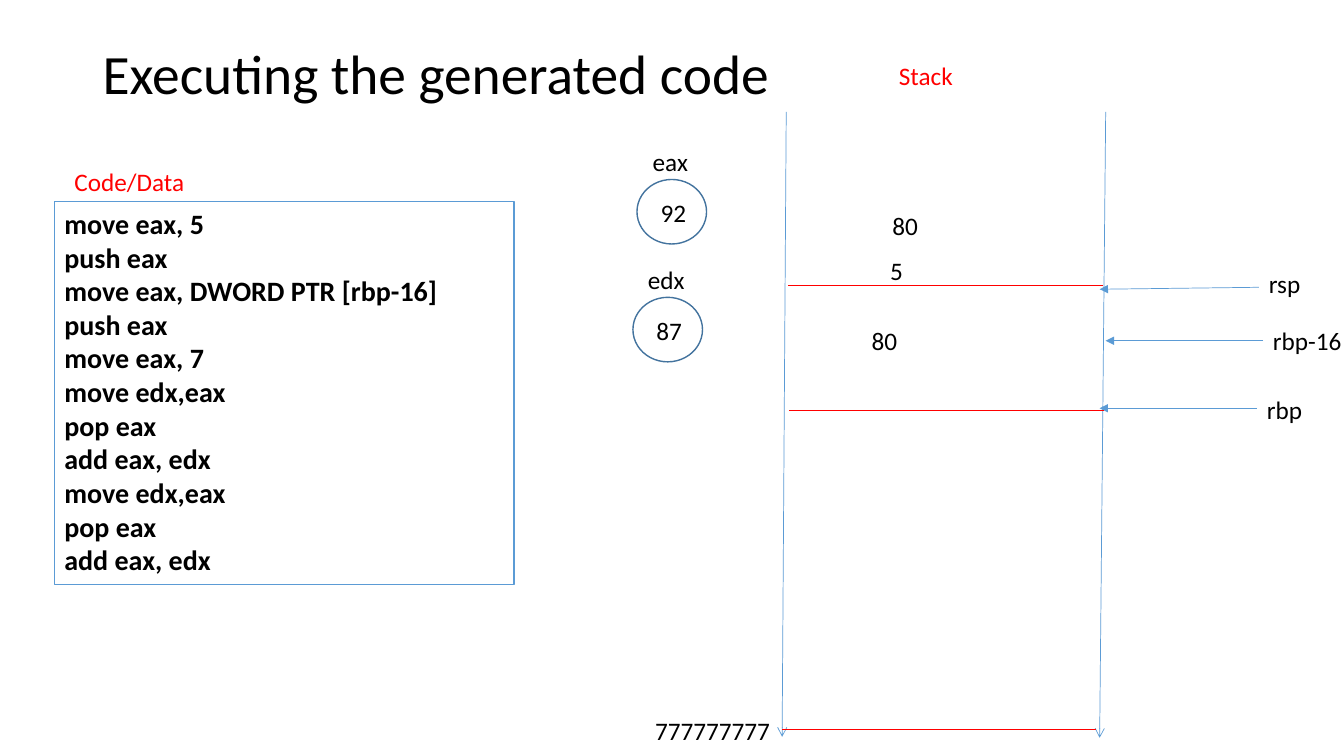
import pptx
import pptx.util
import pptx.dml.color
import pptx.enum.dml
import pptx.enum.shapes
import pptx.enum.text
import pptx.oxml

Pt = pptx.util.Pt
Align = pptx.enum.text.PP_ALIGN
Shape = pptx.enum.shapes.MSO_SHAPE
BLACK, RED, BLUE, DARK_BLUE = "000000", "FF0000", "5B9BD5", "43739E"


def paint(color, value):
    color.rgb = pptx.dml.color.RGBColor.from_string(value)


def write(box, text, size=18, color=BLACK, bold=False, align=Align.LEFT,
          anchor=pptx.enum.text.MSO_ANCHOR.TOP, spacing=1.0):
    frame = box.text_frame
    frame.word_wrap = True
    frame.vertical_anchor = anchor
    for number, words in enumerate(text.split("\n")):
        para = frame.add_paragraph() if number else frame.paragraphs[0]
        para.alignment = align
        para.line_spacing = spacing
        span = para.add_run()
        span.text = words
        span.font.name = "Calibri"
        span.font.size = Pt(size)
        span.font.bold = bold
        paint(span.font.color, color)


deck = pptx.Presentation()
deck.slide_width, deck.slide_height = Pt(960), Pt(540)
page = deck.slides.add_slide(deck.slide_layouts[6])
shapes = page.shapes

title = shapes.add_textbox(Pt(66.24), Pt(28.8), Pt(828), Pt(51.12))
write(title, "Executing the generated code", size=39.6, spacing=0.9,
      anchor=pptx.enum.text.MSO_ANCHOR.MIDDLE)

code = """move eax, 5
push eax
move eax, DWORD PTR [rbp-16]
push eax
move eax, 7
move edx,eax
pop eax
add eax, edx
move edx,eax
pop eax
add eax, edx"""
listing = shapes.add_shape(Shape.RECTANGLE, Pt(38.9), Pt(144), Pt(328.3), Pt(273.6))
listing.shadow.inherit = False
listing.fill.background()
paint(listing.line.color, BLUE)
listing.line.width = Pt(0.75)
write(listing, code, size=20, bold=True)

labels = [
    ("Code/Data", 46.1, 115.2, 170.6, RED, Align.LEFT),
    ("Stack", 635, 39.6, 170.6, RED, Align.LEFT),
    ("rsp", 899.3, 187.9, 50.4, BLACK, Align.LEFT),
    ("rbp-16", 902.2, 229, 69.8, BLACK, Align.LEFT),
    ("rbp", 897.8, 277.9, 50.4, BLACK, Align.LEFT),
    ("777777777", 460.8, 507.6, 114.5, BLACK, Align.LEFT),
    ("80", 615.6, 229, 74.9, BLACK, Align.LEFT),
    ("80", 626.4, 146.9, 40.3, BLACK, Align.CENTER),
    ("5", 626.4, 178.6, 28.1, BLACK, Align.CENTER),
]
for text, left, top, width, color, align in labels:
    label = shapes.add_textbox(Pt(left), Pt(top), Pt(width), Pt(28.8))
    write(label, text, color=color, align=align)

registers = [("eax", "92", 455, 128.2), ("edx", "87", 452.1, 212.4)]
for name, value, left, top in registers:
    circle = shapes.add_shape(Shape.OVAL, Pt(left), Pt(top), Pt(49.7), Pt(46.1))
    circle.shadow.inherit = False
    circle.fill.background()
    paint(circle.line.color, DARK_BLUE)
    circle.line.width = Pt(1)
    name_box = shapes.add_textbox(Pt(left - 4.6), Pt(top - 27.4), Pt(56.9), Pt(28.8))
    write(name_box, name, align=Align.CENTER)
    value_box = shapes.add_textbox(Pt(left + 5.8), Pt(top + 9.4), Pt(40.3), Pt(28.8))
    write(value_box, value, align=Align.CENTER)

lines = [
    (561.6, 79.9, 558.7, 526.3, BLUE, "arrow"),
    (789.8, 79.9, 785.5, 527, BLUE, "arrow"),
    (899.3, 205.2, 785.5, 206.6, BLUE, "triangle"),
    (902.2, 243.4, 789.8, 243.4, BLUE, "triangle"),
    (897.8, 291.6, 785.5, 291.6, BLUE, "triangle"),
    (563, 203.8, 787.7, 203.8, RED, None),
    (563.8, 293, 788.4, 293, RED, None),
    (558.7, 521.3, 782.6, 521.3, RED, None),
]
namespace = 'xmlns:a="http://schemas.openxmlformats.org/drawingml/2006/main"'
for start_x, start_y, end_x, end_y, color, head in lines:
    line = shapes.add_connector(pptx.enum.shapes.MSO_CONNECTOR.STRAIGHT,
                                Pt(start_x), Pt(start_y), Pt(end_x), Pt(end_y))
    paint(line.line.color, color)
    line.line.width = Pt(0.5)
    if head:
        line.line._get_or_add_ln().append(
            pptx.oxml.parse_xml(f'<a:tailEnd {namespace} type="{head}"/>'))
    line._element.spPr.append(pptx.oxml.parse_xml(f"<a:effectLst {namespace}/>"))

deck.save("out.pptx")
